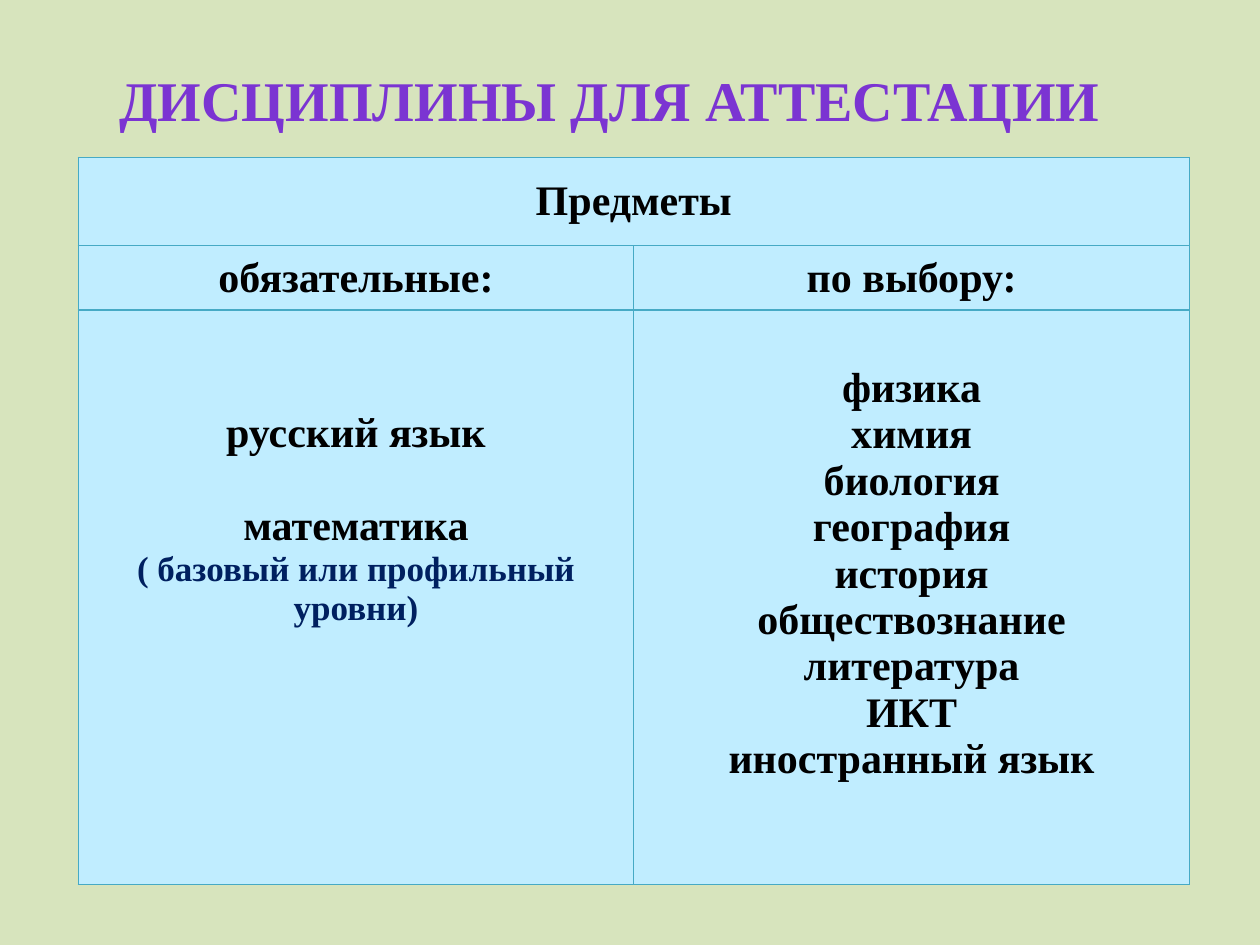
"""Builds a slide with a table of the subjects for attestation."""
from dataclasses import dataclass

from lxml.etree import SubElement
from pptx import Presentation
from pptx.dml.color import RGBColor as RGB
from pptx.enum.text import MSO_ANCHOR as ANCHOR, PP_ALIGN as ALIGN
from pptx.oxml.ns import qn
from pptx.util import Inches, Pt


@dataclass(frozen=True)
class Theme:
    font: str = "Times New Roman"
    background: RGB = RGB(0xD7, 0xE4, 0xBD)
    title: RGB = RGB(0x7B, 0x34, 0xD2)
    cell: RGB = RGB(0xC0, 0xED, 0xFF)
    border: RGB = RGB(0x46, 0xAA, 0xC5)
    text: RGB = RGB(0, 0, 0)
    note: RGB = RGB(0, 0x20, 0x60)
    title_size: int = 32
    text_size: int = 24
    note_size: int = 20
    border_width: float = 0.75


THEME = Theme()
MARGIN = 0.03
ELECTIVES = ["физика", "химия", "биология", "география", "история",
             "обществознание", "литература", "ИКТ", "иностранный язык"]


def style_paragraph(p, size, color):
    p.alignment = ALIGN.CENTER
    p.font.name = THEME.font
    p.font.size = Pt(size)
    p.font.bold = True
    p.font.color.rgb = color


def add_title(s, text):
    sp = s.shapes.title
    sp.left, sp.top, sp.width, sp.height = map(Inches, (0.31, 0.47, 9.06, 0.64))
    tf = sp.text_frame
    tf.text = text
    tf.vertical_anchor = ANCHOR.MIDDLE
    style_paragraph(tf.paragraphs[0], THEME.title_size, THEME.title)


def set_borders(cell):
    tc_pr = cell._tc.get_or_add_tcPr()
    for i, side in enumerate(("lnL", "lnR", "lnT", "lnB")):
        ln = SubElement(tc_pr, qn(f"a:{side}"), w=str(Pt(THEME.border_width)))
        fill = SubElement(ln, qn("a:solidFill"))
        SubElement(fill, qn("a:srgbClr"), val=str(THEME.border))
        tc_pr.insert(i, ln)


def format_cell(cell):
    cell.fill.solid()
    cell.fill.fore_color.rgb = THEME.cell
    cell.vertical_anchor = ANCHOR.MIDDLE
    cell.margin_left = cell.margin_right = Inches(MARGIN)
    cell.margin_top = cell.margin_bottom = Inches(MARGIN)
    set_borders(cell)


def fill_cell(cell, lines, space_below=0):
    cell.margin_bottom = Inches(MARGIN + space_below)
    tf = cell.text_frame
    tf.text = "\n".join(lines)
    for p in tf.paragraphs:
        style_paragraph(p, THEME.text_size, THEME.text)
    return tf.paragraphs


def add_subject_table(s):
    widths, heights = (4.41, 4.41), (0.7, 0.51, 4.56)
    frame = s.shapes.add_table(len(heights), len(widths), Inches(0.62), Inches(1.25),
                               Inches(sum(widths)), Inches(sum(heights)))
    table = frame.table
    table.first_row = table.horz_banding = False
    for column, width in zip(table.columns, widths):
        column.width = Inches(width)
    for row, height in zip(table.rows, heights):
        row.height = Inches(height)
    for cell in table.iter_cells():
        format_cell(cell)
    table.cell(0, 0).merge(table.cell(0, 1))
    fill_cell(table.cell(0, 0), ["Предметы"])
    fill_cell(table.cell(1, 0), ["обязательные:"])
    fill_cell(table.cell(1, 1), ["по выбору:"])
    required = ["русский язык", "математика", "( базовый или профильный уровни)"]
    _, maths, levels = fill_cell(table.cell(2, 0), required, space_below=1.24)
    maths.space_before = Pt(26.6)
    style_paragraph(levels, THEME.note_size, THEME.note)
    fill_cell(table.cell(2, 1), ELECTIVES, space_below=0.37)


def main():
    prs = Presentation()
    prs.slide_width, prs.slide_height = Inches(10), Inches(7.5)
    s = prs.slides.add_slide(prs.slide_layouts[5])
    s.background.fill.solid()
    s.background.fill.fore_color.rgb = THEME.background
    add_subject_table(s)
    add_title(s, "ДИСЦИПЛИНЫ ДЛЯ АТТЕСТАЦИИ")
    prs.save("out.pptx")


if __name__ == "__main__":
    main()
